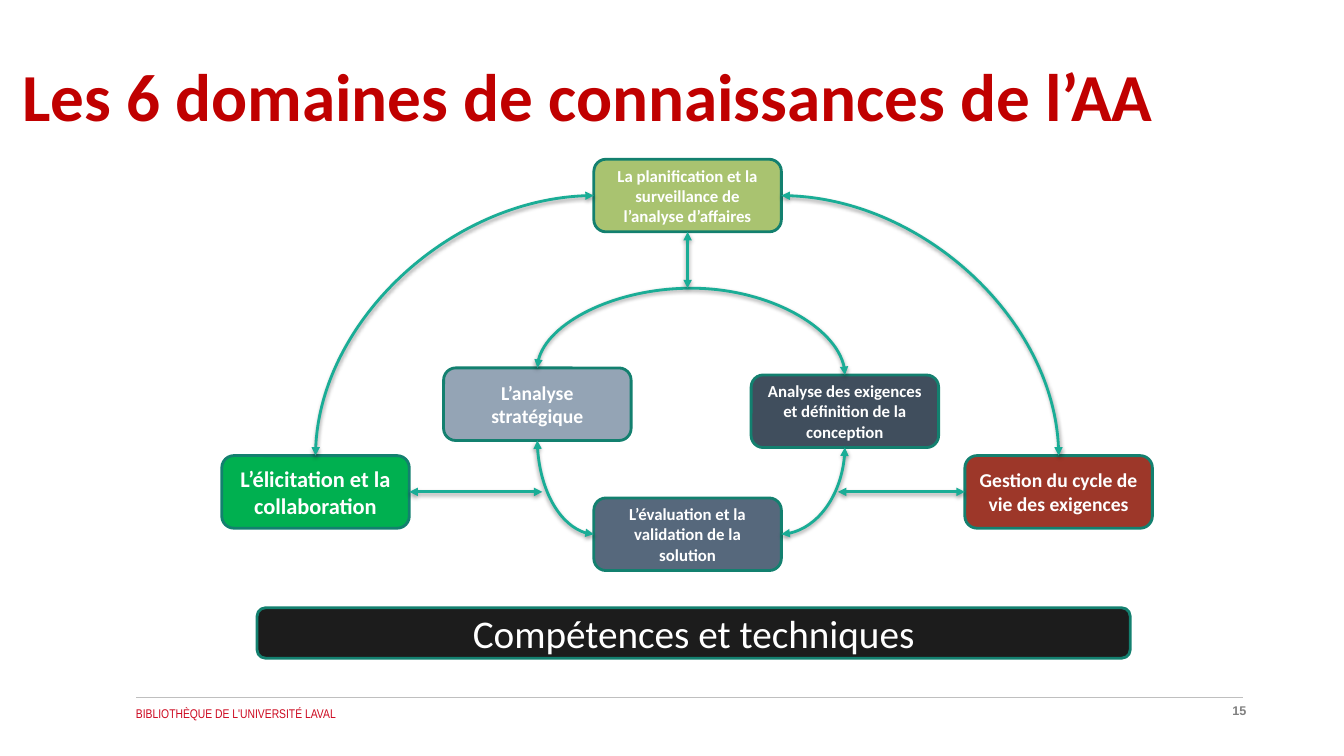
"""Build the slide on the six knowledge areas of business analysis."""
from lxml import etree
from pptx import Presentation
from pptx.dml.color import RGBColor
from pptx.enum.shapes import MSO_CONNECTOR, MSO_SHAPE
from pptx.enum.text import MSO_ANCHOR, PP_ALIGN
from pptx.oxml.ns import qn
from pptx.util import Inches, Pt

STRAIGHT, CURVE = MSO_CONNECTOR.STRAIGHT, MSO_CONNECTOR.CURVE
ROUNDED = MSO_SHAPE.ROUNDED_RECTANGLE
LEFT, CENTER, RIGHT = PP_ALIGN.LEFT, PP_ALIGN.CENTER, PP_ALIGN.RIGHT
TOP, MIDDLE = MSO_ANCHOR.TOP, MSO_ANCHOR.MIDDLE

WHITE = RGBColor(0xFF, 0xFF, 0xFF)
TITLE_RED = RGBColor(0xC0, 0x00, 0x00)
FOOTER_RED = RGBColor(0xCD, 0x09, 0x20)
NUMBER_GRAY = RGBColor(0x80, 0x80, 0x80)
RULE_GRAY = RGBColor(0xBF, 0xBF, 0xBF)
BORDER = RGBColor(0x13, 0x80, 0x6F)
ARROW = RGBColor(0x1A, 0xAD, 0x96)
BLACK = RGBColor(0x1C, 0x1C, 0x1C)

BOX_WIDTH, BOX_HEIGHT = 1.86, 0.72
ARCH_TOP = 2.86

LABELS = [
    ("BIBLIOTHÈQUE DE L'UNIVERSITÉ LAVAL", (1.25, 6.95, 8.05, 0.25), "Arial Narrow", 9, FOOTER_RED, False, LEFT),
    ("15", (11.07, 6.92, 1.39, 0.25), "Arial", 9, NUMBER_GRAY, True, RIGHT),
    ("Les 6 domaines de connaissances de l’AA", (0.12, 0.49, 12.42, 0.92), "Calibri", 48, TITLE_RED, True, LEFT),
]
DOMAINS = {
    "cycle": ("Gestion du cycle de vie des exigences", 9.57, 4.52, 14, RGBColor(0x9D, 0x37, 0x29)),
    "evaluation": ("L’évaluation et la validation de la solution", 5.89, 4.94, 12, RGBColor(0x56, 0x68, 0x7C)),
    "exigences": ("Analyse des exigences et définition de la conception", 7.45, 3.72, 12, RGBColor(0x40, 0x4E, 0x5D)),
    "elicitation": ("L’élicitation et la collaboration", 2.2, 4.52, 16, RGBColor(0x00, 0xB0, 0x50)),
    "strategie": ("L’analyse stratégique", 4.4, 3.65, 14, RGBColor(0x94, 0xA4, 0xB5)),
    "planification": ("La planification et la surveillance de l’analyse d’affaires", 5.89, 1.58, 12,
                      RGBColor(0xA9, 0xC3, 0x70)),
}
SIDES = {"left": (0, 0.5), "right": (1, 0.5), "top": (0.5, 0), "bottom": (0.5, 1)}
QUARTER_CURVES = [
    ("planification", "left", "elicitation", "top"),
    ("planification", "right", "cycle", "top"),
    ("evaluation", "left", "strategie", "bottom"),
    ("evaluation", "right", "exigences", "bottom"),
]


def write(shape, text, font_name, size, color, bold, alignment, anchor):
    frame = shape.text_frame
    frame.word_wrap = True
    frame.vertical_anchor = anchor
    frame.text = text
    paragraph = frame.paragraphs[0]
    paragraph.alignment = alignment
    font = paragraph.runs[0].font
    font.name, font.size, font.bold = font_name, Pt(size), bold
    font.color.rgb = color


def add_box(slide, text, place, size, fill, bold):
    shape = slide.shapes.add_shape(ROUNDED, *map(Inches, place))
    shape.shadow.inherit = False
    shape.fill.solid()
    shape.fill.fore_color.rgb = fill
    shape.line.color.rgb = BORDER
    shape.line.width = Pt(2)
    write(shape, text, "Calibri", size, WHITE, bold, CENTER, MIDDLE)


def add_line(slide, kind, start, end, color, width):
    line = slide.shapes.add_connector(kind, *map(Inches, start + end))
    line.line.color.rgb = color
    line.line.width = Pt(width)
    etree.SubElement(line._element.spPr, qn("a:effectLst"))
    return line


def add_arrow(slide, kind, start, end):
    arrow = add_line(slide, kind, start, end, ARROW, 2)
    properties = arrow._element.spPr
    outline = properties.find(qn("a:ln"))
    for tip in ("a:headEnd", "a:tailEnd"):
        etree.SubElement(outline, qn(tip), type="triangle")
    shadow = etree.SubElement(properties.find(qn("a:effectLst")), qn("a:outerShdw"),
                              blurRad="40000", dist="20000", dir="5400000", rotWithShape="0")
    tint = etree.SubElement(shadow, qn("a:srgbClr"), val="000000")
    etree.SubElement(tint, qn("a:alpha"), val="38000")
    return properties


def side(name, which):
    left, top = DOMAINS[name][1:3]
    across, down = SIDES[which]
    return left + across * BOX_WIDTH, top + down * BOX_HEIGHT


def add_arch(slide, start, end):
    middle_x, middle_y = (start[0] + end[0]) / 2, (start[1] + end[1]) / 2
    half_span, half_drop = (end[0] - start[0]) / 2, (end[1] - start[1]) / 2
    properties = add_arrow(slide, CURVE, (middle_x + half_drop, middle_y - half_span),
                           (middle_x - half_drop, middle_y + half_span))
    properties.find(qn("a:xfrm")).set("rot", "16200000")
    bend = round((ARCH_TOP - start[1]) / (2 * half_drop) * 100000)
    guides = properties.find(qn("a:prstGeom")).find(qn("a:avLst"))
    etree.SubElement(guides, qn("a:gd"), name="adj1", fmla=f"val {bend}")


def main():
    presentation = Presentation()
    presentation.slide_width, presentation.slide_height = Inches(13.33), Inches(7.5)
    slide = presentation.slides.add_slide(presentation.slide_layouts[6])

    add_line(slide, STRAIGHT, (1.35, 6.92), (12.33, 6.92), RULE_GRAY, 0.25)
    for text, place, *style in LABELS:
        write(slide.shapes.add_textbox(*map(Inches, place)), text, *style, TOP)
    for text, left, top, size, fill in DOMAINS.values():
        add_box(slide, text, (left, top, BOX_WIDTH, BOX_HEIGHT), size, fill, True)

    for first, first_side, second, second_side in QUARTER_CURVES:
        properties = add_arrow(slide, CURVE, side(first, first_side), side(second, second_side))
        properties.find(qn("a:prstGeom")).set("prst", "curvedConnector2")
    add_arch(slide, side("strategie", "top"), side("exigences", "top"))

    elicitation, cycle = side("elicitation", "right"), side("cycle", "left")
    planning = side("planification", "bottom")
    add_arrow(slide, STRAIGHT, elicitation, (5.38, elicitation[1]))
    add_arrow(slide, STRAIGHT, (8.31, cycle[1]), cycle)
    add_arrow(slide, STRAIGHT, planning, (planning[0], ARCH_TOP))

    add_box(slide, "Compétences et techniques", (2.55, 6.03, 8.66, 0.5), 28, BLACK, False)
    presentation.save("out.pptx")


if __name__ == "__main__":
    main()
